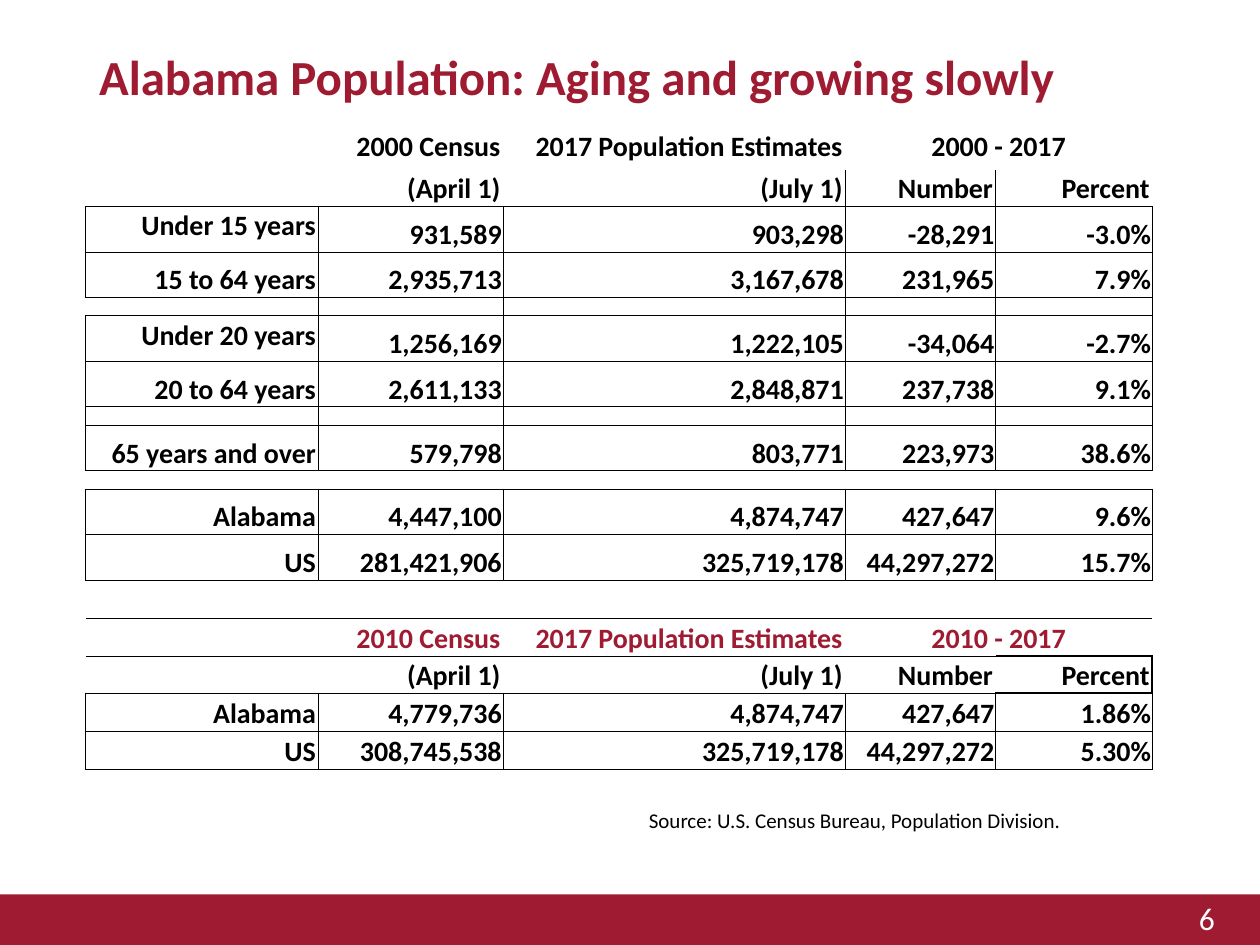
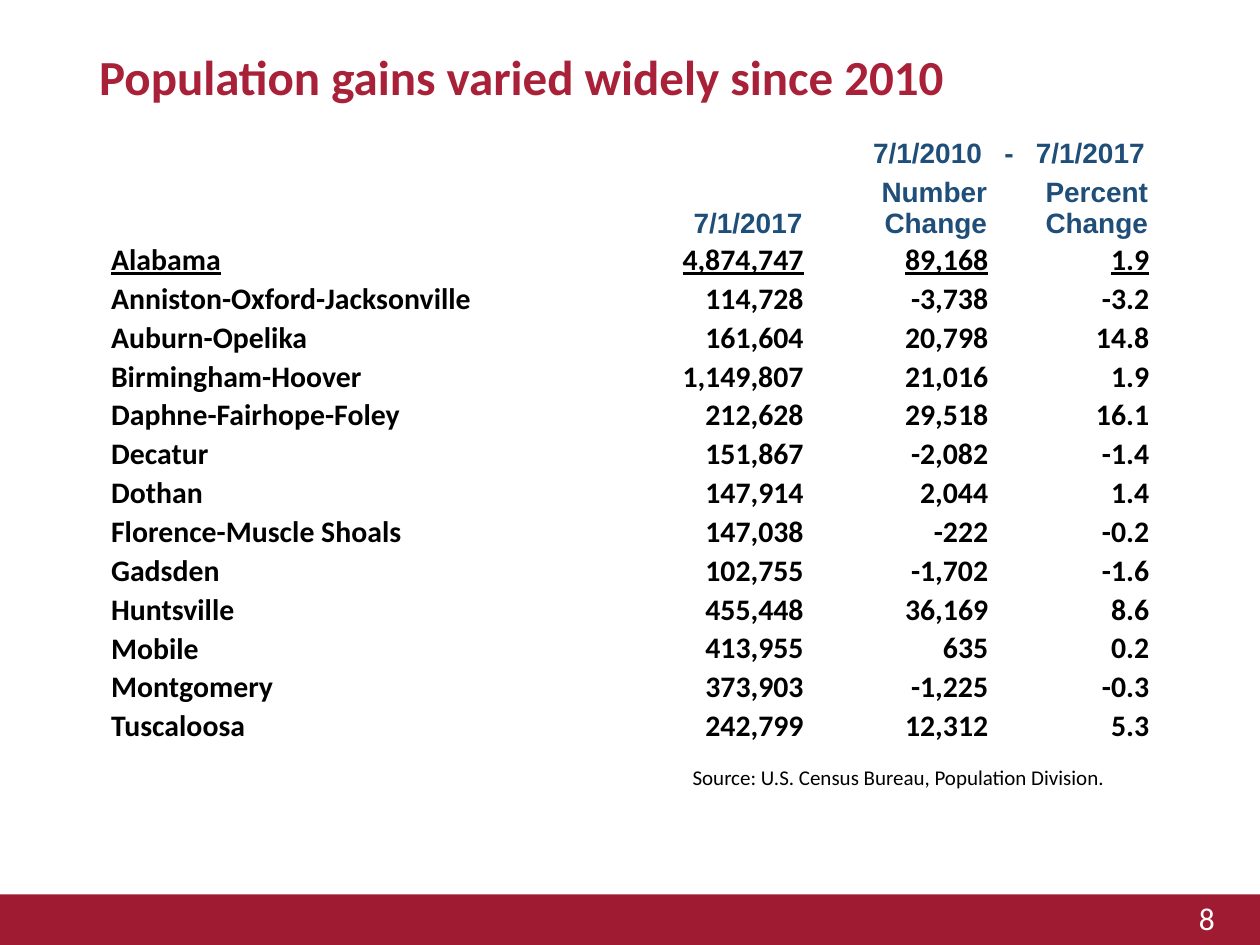
import lxml.etree
import pptx
import pptx.dml.color
import pptx.enum.shapes
import pptx.enum.text
import pptx.oxml.ns
import pptx.util

Pt = pptx.util.Pt
rgb = pptx.dml.color.RGBColor.from_string
qn = pptx.oxml.ns.qn
sub = lxml.etree.SubElement
ALIGN = pptx.enum.text.PP_ALIGN
ANCHOR = pptx.enum.text.MSO_ANCHOR

CRIMSON = "9E1B32"
BLACK = "000000"
NO_GRID = "{2D5ABB26-0587-4C30-8999-92F81FD0307C}"
SOURCE = "Source: U.S. Census Bureau, Population Division."


def write(tf, text, font="Calibri", size=16, color=BLACK, bold=False,
          underline=False, align=ALIGN.LEFT, spacing=None):
    for i, line in enumerate(text.split("\n")):
        p = tf.paragraphs[0] if i == 0 else tf.add_paragraph()
        p.alignment = align
        p.line_spacing = spacing
        if not line:
            sub(p._p, qn("a:endParaRPr"), sz="700")
            continue
        r = p.add_run()
        r.text = line
        r.font.name = font
        r.font.size = Pt(size)
        r.font.bold = bold
        r.font.underline = underline
        r.font.color.rgb = rgb(color)


def add_table(sl, left, top, widths, heights, rows, formats,
              edges=None, cell_edges={}, thick=None):
    frame = sl.shapes.add_table(len(heights), len(widths), Pt(left), Pt(top),
                                Pt(sum(widths)), Pt(sum(heights)))
    table = frame.table
    table.first_row = table.horz_banding = False
    next(frame.element.iter(qn("a:tableStyleId"))).text = NO_GRID
    for column, width in zip(table.columns, widths):
        column.width = Pt(width)
    for i, height in enumerate(heights):
        table.rows[i].height = Pt(height)
        for j in range(len(widths)):
            cell = table.cell(i, j)
            kind = dict(formats(i, j))
            inset = kind.pop("inset", 0.75)
            cell.vertical_anchor = kind.pop("anchor", ANCHOR.BOTTOM)
            cell.margin_left = cell.margin_right = cell.margin_top = Pt(inset)
            cell.margin_bottom = Pt(0)
            write(cell.text_frame, rows[i][j] if rows[i] else "", **kind)
            sides = cell_edges.get((i, j), edges[i] if edges else "")
            tcPr = cell._tc.get_or_add_tcPr()
            for side in "LRTB":
                if side in sides:
                    width = 1 if (i, j) == thick else 0.5
                    ln = sub(tcPr, qn("a:ln" + side), w=str(Pt(width)))
                    fill = sub(ln, qn("a:solidFill"))
                    sub(fill, qn("a:srgbClr"), val=BLACK)
            cell.fill.background()
    return table


prs = pptx.Presentation()
prs.slide_width = Pt(720)
prs.slide_height = Pt(540)

slides = []
for title, number, color, height in [
    ("Alabama Population: Aging and growing slowly", "6", CRIMSON, 36),
    ("Population gains varied widely since 2010", "8", "A82138", 55),
]:
    sl = prs.slides.add_slide(prs.slide_layouts[5])
    slides.append(sl)

    band = sl.shapes.add_shape(pptx.enum.shapes.MSO_SHAPE.RECTANGLE,
                               Pt(0), Pt(511), Pt(720), Pt(29))
    band.shadow.inherit = False
    band.fill.solid()
    band.fill.fore_color.rgb = rgb(CRIMSON)
    band.line.fill.background()

    sp = sl.shapes.add_textbox(Pt(678), Pt(510), Pt(42), Pt(29))
    sp.text_frame.word_wrap = True
    write(sp.text_frame, number, size=18, color="FFFFFF")

    sp = sl.shapes.title
    sp.left, sp.top, sp.width, sp.height = Pt(49.5), Pt(26.5), Pt(620.5), Pt(height)
    tf = sp.text_frame
    tf.word_wrap = True
    tf.auto_size = pptx.enum.text.MSO_AUTO_SIZE.NONE
    tf.vertical_anchor = ANCHOR.TOP
    write(tf, title, size=28, color=color, bold=True, spacing=0.9)

age_sl, metro_sl = slides
age_widths = [133, 105.5, 195.5, 86, 89.5]
dates = ["", "(April 1)", "(July 1)", "Number", "Percent"]

age_rows = [
    ["", "2000 Census", "2017 Population Estimates", "2000 - 2017", ""],
    dates,
    ["Under 15 years", "931,589", "903,298", "-28,291", "-3.0%"],
    ["15 to 64 years", "2,935,713", "3,167,678", "231,965", "7.9%"],
    None,
    ["Under 20 years", "1,256,169", "1,222,105", "-34,064", "-2.7%"],
    ["20 to 64 years", "2,611,133", "2,848,871", "237,738", "9.1%"],
    None,
    ["65 years and over", "579,798", "803,771", "223,973", "38.6%"],
    None,
    ["Alabama", "4,447,100", "4,874,747", "427,647", "9.6%"],
    ["US", "281,421,906", "325,719,178", "44,297,272", "15.7%"],
]
recent_rows = [
    ["", "2010 Census", "2017 Population Estimates", "2010 - 2017", ""],
    dates,
    ["Alabama", "4,779,736", "4,874,747", "427,647", "1.86%"],
    ["US", "308,745,538", "325,719,178", "44,297,272", "5.30%"],
]
age_heights = [28, 21] + [26 if row else 10.5 for row in age_rows[2:]]
age_edges = ["", "B"] + ["LRTB"] * 7 + ["TB"] + ["LRTB"] * 2

for top, heights, rows, head_color, edges, cell_edges, thick in [
    (69, age_heights, age_rows, BLACK, age_edges,
     {(1, 2): "RB", (1, 3): "LB", (4, 0): "RTB"}, None),
    (353.5, [21.5, 21, 22, 21.5], recent_rows, CRIMSON,
     ["TB", "TB", "LRTB", "LRTB"], {(1, 4): "RT"}, (1, 4)),
]:
    def age_format(i, j):
        middle = i == 0 or (i == 1 and j < 3)
        return dict(bold=True,
                    color=head_color if i == 0 else BLACK,
                    align=ALIGN.CENTER if (i, j) == (0, 3) else ALIGN.RIGHT,
                    anchor=ANCHOR.MIDDLE if middle else ANCHOR.BOTTOM,
                    inset=1.5 if i < 2 or j == 0 else 0.75)

    table = add_table(age_sl, 49, top, age_widths, heights, rows, age_format,
                      edges, cell_edges, thick)
    table.cell(0, 3).merge(table.cell(0, 4))
    for i, row in enumerate(rows):
        if row and row[0].startswith("Under"):
            table.cell(i, 0).vertical_anchor = ANCHOR.TOP

metro_rows = [
    ["", "", "7/1/2010\t-\t7/1/2017", ""],
    ["", "7/1/2017", "Number Change", "Percent\nChange"],
    ["Alabama", "4,874,747", "89,168", "1.9"],
    ["Anniston-Oxford-Jacksonville", "114,728", "-3,738", "-3.2"],
    ["Auburn-Opelika", "161,604", "20,798", "14.8"],
    ["Birmingham-Hoover", "1,149,807", "21,016", "1.9"],
    ["Daphne-Fairhope-Foley", "212,628", "29,518", "16.1"],
    ["Decatur", "151,867", "-2,082", "-1.4"],
    ["Dothan", "147,914", "2,044", "1.4"],
    ["Florence-Muscle Shoals", "147,038", "-222", "-0.2"],
    ["Gadsden", "102,755", "-1,702", "-1.6"],
    ["Huntsville", "455,448", "36,169", "8.6"],
    ["Mobile", "413,955", "635", "0.2"],
    ["Montgomery", "373,903", "-1,225", "-0.3"],
    ["Tuscaloosa", "242,799", "12,312", "5.3"],
]


def metro_format(i, j):
    left = j == 0 or i == 0
    kind = dict(bold=True, align=ALIGN.LEFT if left else ALIGN.RIGHT,
                inset=1.5 if i < 2 or j == 0 else 0.75)
    if i < 2:
        return dict(kind, font="Arial", color="1F4E79")
    return dict(kind, size=17, underline=i == 2)


table = add_table(metro_sl, 62, 62, [290, 108, 105.5, 92],
                  [35, 40] + [22.2] * 13, metro_rows, metro_format)
period = table.cell(0, 2)
period.merge(table.cell(0, 3))
period.margin_left = Pt(39)
tabs = sub(period.text_frame.paragraphs[0]._p.get_or_add_pPr(), qn("a:tabLst"))
for stop in (75, 93):
    sub(tabs, qn("a:tab"), pos=str(Pt(stop)), algn="l")

for sl, left, top in [(age_sl, 370, 461.5), (metro_sl, 395, 437)]:
    add_table(sl, left, top, [285], [15], [[SOURCE]], lambda i, j: dict(size=12))

prs.save("out.pptx")
